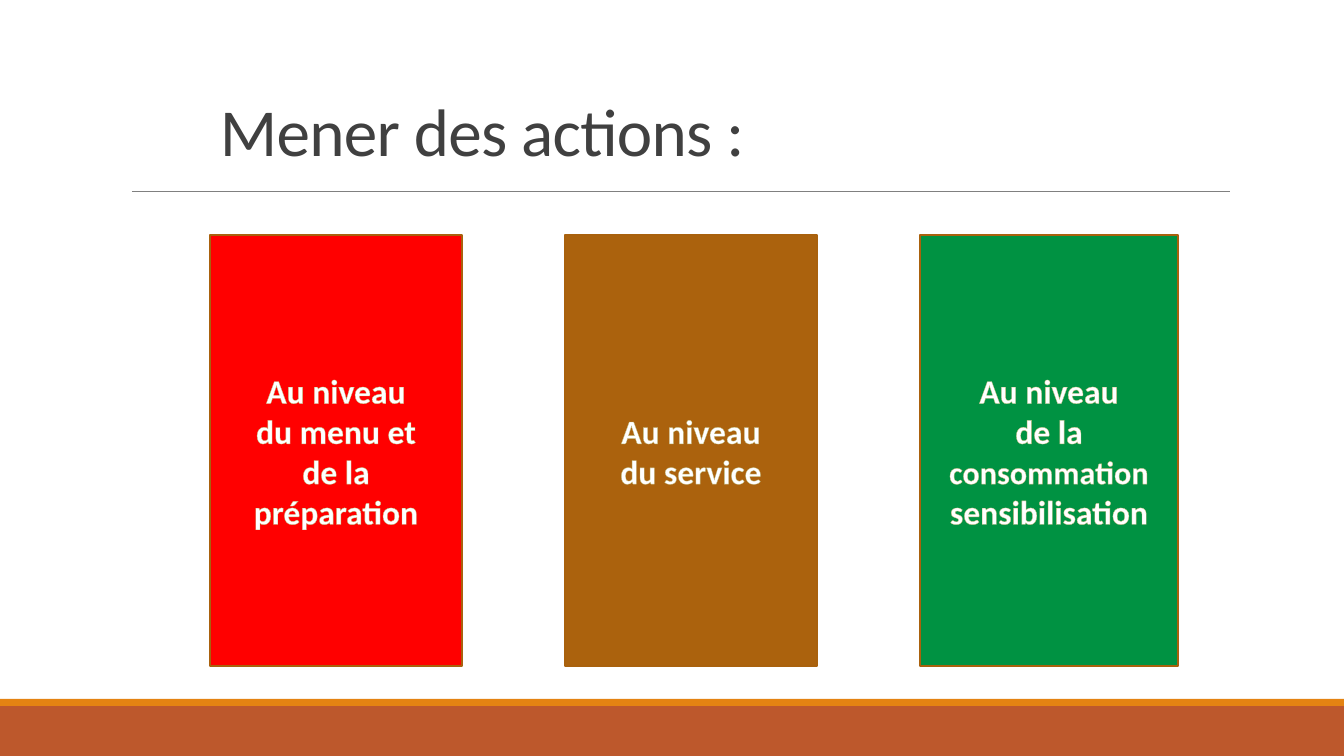
from lxml import etree
from pptx import Presentation
from pptx.dml.color import RGBColor
from pptx.enum.shapes import MSO_CONNECTOR, MSO_SHAPE
from pptx.enum.text import MSO_ANCHOR, PP_ALIGN
from pptx.oxml.ns import qn
from pptx.util import Emu, Pt

RECT, STRAIGHT = MSO_SHAPE.RECTANGLE, MSO_CONNECTOR.STRAIGHT
MIDDLE, BOTTOM, CENTER = MSO_ANCHOR.MIDDLE, MSO_ANCHOR.BOTTOM, PP_ALIGN.CENTER
EMU_PER_PX = 914400 / 100.8
WIDTH, HEIGHT = 1344, 756
FONT = "Calibri"
COLORS = {
    "title": "404040", "rule": "808080", "band": "BD582C", "stripe": "E48312",
    "red": "FF0000", "brown": "AB620D", "green": "009242",
    "border": "A9610D", "label": "FFFFFF", "outline": "C2BC80",
}
CARDS = [
    ("red", 252, [["Au niveau"], ["du menu et"], ["de la préparation"]]),
    ("brown", 252, [["Au niveau"], ["du service"]]),
    ("green", 258, [["Au niveau"], ["de la ", "consommation", " sensibilisation"]]),
]
LABEL_SIZES = {"consommation": 23}


def px(n):
    """Turn pixels into EMU."""
    return Emu(round(n * EMU_PER_PX))


def rgb(name):
    """Look up a named colour."""
    return RGBColor.from_string(COLORS[name])


def add_rect(s, x, y, w, h, fill, border=None):
    """Add a flat rectangle with an optional border."""
    sp = s.shapes.add_shape(RECT, px(x), px(y), px(w), px(h))
    sp.shadow.inherit = False
    sp.fill.solid()
    sp.fill.fore_color.rgb = rgb(fill)
    if border:
        sp.line.color.rgb = rgb(border)
        sp.line.width = Pt(1.25)
    else:
        sp.line.fill.background()
    return sp


def style_run(r, size, color, bold=False):
    """Set the font of a run."""
    r.font.name, r.font.size, r.font.bold = FONT, Pt(size), bold
    r.font.color.rgb = rgb(color)


def outline_run(r):
    """Give a run a thin outline."""
    ln = etree.Element(qn("a:ln"), w=str(Pt(0.8)))
    fill = etree.SubElement(ln, qn("a:solidFill"))
    etree.SubElement(fill, qn("a:srgbClr"), val=COLORS["outline"])
    r.font._element.insert(0, ln)


def add_footer(s, x, y, w, h):
    """Draw the bottom band with the stripe on its upper edge."""
    stripe = 7
    add_rect(s, x, y + stripe, w, h - stripe, "band")
    add_rect(s, x, y, w, stripe, "stripe")


def add_title(s, x, y, w, h):
    """Write the title and draw the rule below it."""
    sp = s.shapes.add_textbox(px(x), px(y), px(w), px(h))
    tf = sp.text_frame
    tf.word_wrap, tf.vertical_anchor = True, BOTTOM
    tf.text = "Mener des actions :"
    p = tf.paragraphs[0]
    p.line_spacing = 0.85
    r = p.runs[0]
    style_run(r, 48, "title")
    r.font._element.set("spc", "-50")

    rule_x, rule_y = x - 78, y + h + 16
    rule = s.shapes.add_connector(
        STRAIGHT, px(rule_x), px(rule_y), px(rule_x + 1098), px(rule_y))
    rule.line.color.rgb = rgb("rule")
    rule.line.width = Pt(0.5)
    etree.SubElement(rule._element.spPr, qn("a:effectLst"))


def add_card(s, x, y, w, h, fill, lines):
    """Draw one coloured card with its centred label."""
    tf = add_rect(s, x, y, w, h, fill, "border").text_frame
    tf.word_wrap, tf.vertical_anchor = True, MIDDLE
    for i, line in enumerate(lines):
        p = tf.add_paragraph() if i else tf.paragraphs[0]
        p.alignment = CENTER
        for text in line:
            r = p.add_run()
            r.text = text
            style_run(r, LABEL_SIZES.get(text, 24), "label", True)
            outline_run(r)


def add_cards(s, x, y, h, pitch):
    """Set the cards in a row at an equal pitch."""
    for i, (fill, w, lines) in enumerate(CARDS):
        add_card(s, x + i * pitch, y, w, h, fill, lines)


def main():
    """Build and save the slide."""
    prs = Presentation()
    prs.slide_width, prs.slide_height = px(WIDTH), px(HEIGHT)
    s = prs.slides.add_slide(prs.slide_layouts[6])
    add_footer(s, 0, 699, WIDTH, HEIGHT - 699)
    add_title(s, 210, 75, 1076, 100)
    add_cards(s, 210, 235, 431, 355)
    prs.save("out.pptx")


if __name__ == "__main__":
    main()
